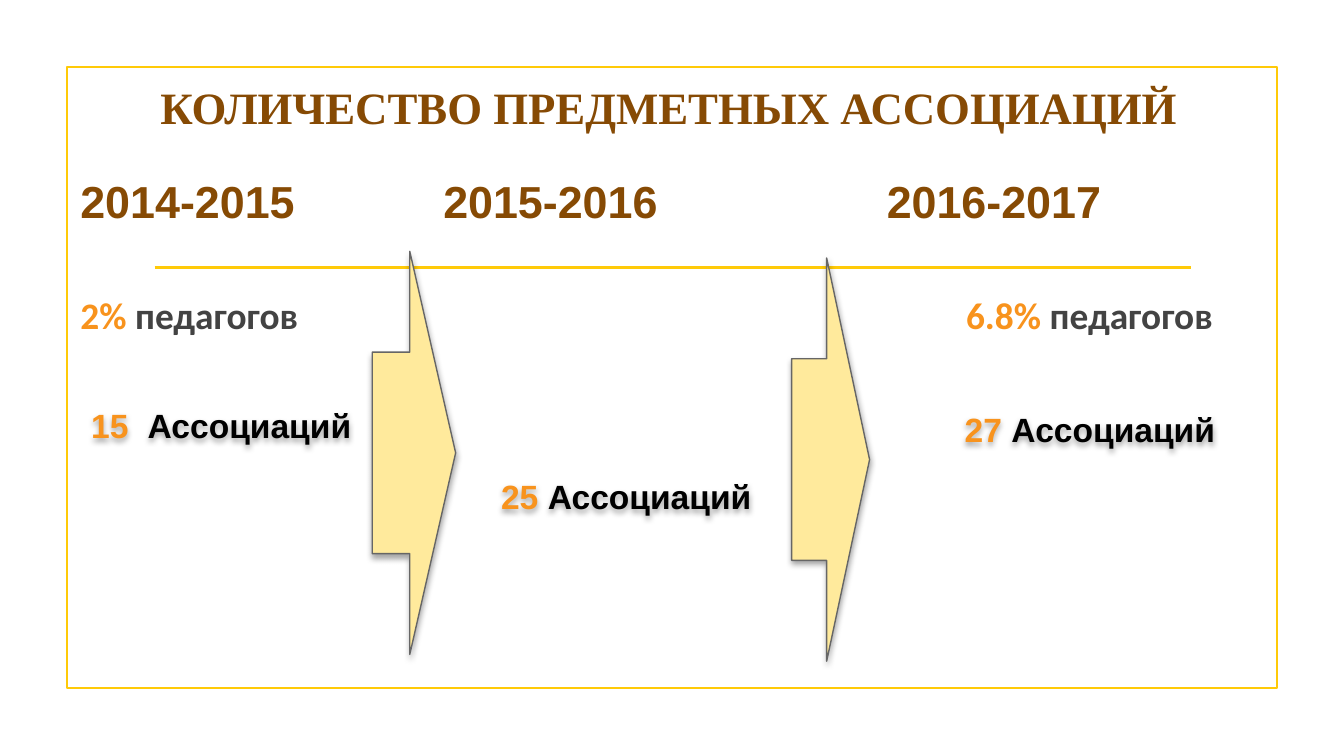
from dataclasses import dataclass

from lxml import etree
from pptx import Presentation
from pptx.dml.color import RGBColor
from pptx.enum.shapes import MSO_CONNECTOR, MSO_SHAPE
from pptx.enum.text import MSO_ANCHOR, PP_ALIGN
from pptx.oxml.ns import qn
from pptx.util import Inches, Pt

RECTANGLE, RIGHT_ARROW = MSO_SHAPE.RECTANGLE, MSO_SHAPE.RIGHT_ARROW
STRAIGHT = MSO_CONNECTOR.STRAIGHT
TOP, MIDDLE = MSO_ANCHOR.TOP, MSO_ANCHOR.MIDDLE
CENTER = PP_ALIGN.CENTER
TITLE_ONLY = 5
SLIDE_WIDTH = Inches(10)
SLIDE_HEIGHT = SLIDE_WIDTH * 9 // 16


@dataclass(frozen=True)
class Theme:
    brown: str = "864A04"
    orange: str = "F8931D"
    gray: str = "434343"
    black: str = "000000"
    gold: str = "FFCA08"
    arrow_fill: str = "FFEA9C"
    arrow_line: str = "666666"
    heading_size: int = 24
    share_size: int = 20
    label_size: int = 18
    rule_width: float = 1.25
    arrow_line_width: float = 0.75


THEME = Theme()


@dataclass(frozen=True)
class Box:
    left: float
    top: float
    width: float
    height: float

    def lengths(self) -> tuple:
        return tuple(map(Inches, (self.left, self.top, self.width, self.height)))


@dataclass(frozen=True)
class Line:
    """One paragraph: (text, colour) runs, font, tab stops and space before."""
    runs: tuple
    font: str
    size: int
    tabs: tuple = ()
    space_before: int = 0


def apply(target, values: dict) -> None:
    for name, value in values.items():
        setattr(target, name, value)


def add_effects(shape, with_shadow: bool) -> None:
    """Replace inherited effects by none or by a soft shadow straight below."""
    properties = shape.element.spPr
    effects = etree.SubElement(properties, qn("a:effectLst"))
    if with_shadow:
        shadow = etree.SubElement(effects, qn("a:outerShdw"), blurRad=str(Pt(3.1)),
                                  dist=str(Pt(1.8)), dir="5400000", rotWithShape="0")
        color = etree.SubElement(shadow, qn("a:srgbClr"), val=THEME.black)
        etree.SubElement(color, qn("a:alpha"), val="35000")


def set_line(shape, color: str, width: float) -> None:
    shape.line.color.rgb = RGBColor.from_string(color)
    shape.line.width = Pt(width)


def write_line(paragraph, line: Line) -> None:
    if line.tabs:
        tab_list = etree.SubElement(paragraph._p.get_or_add_pPr(), qn("a:tabLst"))
        for position in line.tabs:
            etree.SubElement(tab_list, qn("a:tab"), pos=str(Inches(position)), algn="l")
    if line.space_before:
        paragraph.space_before = Pt(line.space_before)
    for text, color in line.runs:
        run = paragraph.add_run()
        run.text = text
        apply(run.font, {"name": line.font, "size": Pt(line.size), "bold": True})
        run.font.color.rgb = RGBColor.from_string(color)


def add_text(slide, box: Box, lines: tuple, anchor=TOP, with_shadow: bool = False) -> None:
    shape = slide.shapes.add_textbox(*box.lengths())
    frame = shape.text_frame
    apply(frame, {"word_wrap": True, "vertical_anchor": anchor})
    for index, line in enumerate(lines):
        write_line(frame.add_paragraph() if index else frame.paragraphs[0], line)
    if with_shadow:
        add_effects(shape, True)


def add_title(slide, text: str) -> None:
    title = slide.shapes.title
    apply(title, dict(zip(("left", "top", "width", "height"),
                          Box(0.13, 0.54, 9.69, 0.5).lengths())))
    apply(title.text_frame, {"word_wrap": True, "vertical_anchor": MIDDLE})
    paragraph = title.text_frame.paragraphs[0]
    paragraph.alignment = CENTER
    write_line(paragraph, Line(((text, THEME.brown),), "Times New Roman",
                               THEME.heading_size))


def add_frame(slide) -> None:
    frame = slide.shapes.add_shape(RECTANGLE, *Box(0.5, 0.5, 9, 4.62).lengths())
    frame.fill.background()
    set_line(frame, THEME.gold, THEME.rule_width)
    add_effects(frame, False)


def add_rule(slide) -> None:
    rule = slide.shapes.add_connector(STRAIGHT, Inches(1.15), Inches(1.99),
                                      Inches(8.86), Inches(1.99))
    set_line(rule, THEME.gold, THEME.rule_width)
    add_effects(rule, False)


def add_arrow(slide, box: Box) -> None:
    arrow = slide.shapes.add_shape(RIGHT_ARROW, *box.lengths())
    arrow.adjustments[0], arrow.adjustments[1] = 0.5, 0.55
    arrow.fill.solid()
    arrow.fill.fore_color.rgb = RGBColor.from_string(THEME.arrow_fill)
    set_line(arrow, THEME.arrow_line, THEME.arrow_line_width)
    add_effects(arrow, True)


@dataclass(frozen=True)
class Association:
    count: str
    separator: str
    left: float
    middle: float


ARROWS = (Box(2.77, 1.87, 0.62, 3), Box(5.89, 1.92, 0.58, 3))
ASSOCIATIONS = (
    Association("15", "\t", 0.58, 3.16),
    Association("25", " ", 3.63, 3.69),
    Association("27", " ", 7.08, 3.19),
)
YEARS = Line((("2014-2015\t2015-2016\t2016-2017", THEME.brown),), "Arial",
             THEME.heading_size, tabs=(2.7, 6))
SHARES = Line((("2% ", THEME.orange), ("педагогов\t", THEME.gray),
               ("6.8% ", THEME.orange), ("педагогов", THEME.gray)),
              "Calibri", THEME.share_size, tabs=(6.59,), space_before=35)


def main() -> None:
    presentation = Presentation()
    apply(presentation, {"slide_width": SLIDE_WIDTH, "slide_height": SLIDE_HEIGHT})
    slide = presentation.slides.add_slide(presentation.slide_layouts[TITLE_ONLY])
    add_frame(slide)
    add_rule(slide)
    add_title(slide, "КОЛИЧЕСТВО ПРЕДМЕТНЫХ АССОЦИАЦИЙ")
    add_text(slide, Box(0.5, 1.24, 9.26, 1.4), (YEARS, SHARES))
    for box in ARROWS:
        add_arrow(slide, box)
    for item in ASSOCIATIONS:
        label = Line(((item.count + item.separator, THEME.orange),
                      ("Ассоциаций", THEME.black)), "Arial", THEME.label_size,
                     tabs=(0.42,) if item.separator == "\t" else ())
        add_text(slide, Box(item.left, item.middle - 0.2, 2.3, 0.4), (label,),
                 MIDDLE, with_shadow=True)
    presentation.save("out.pptx")


if __name__ == "__main__":
    main()
